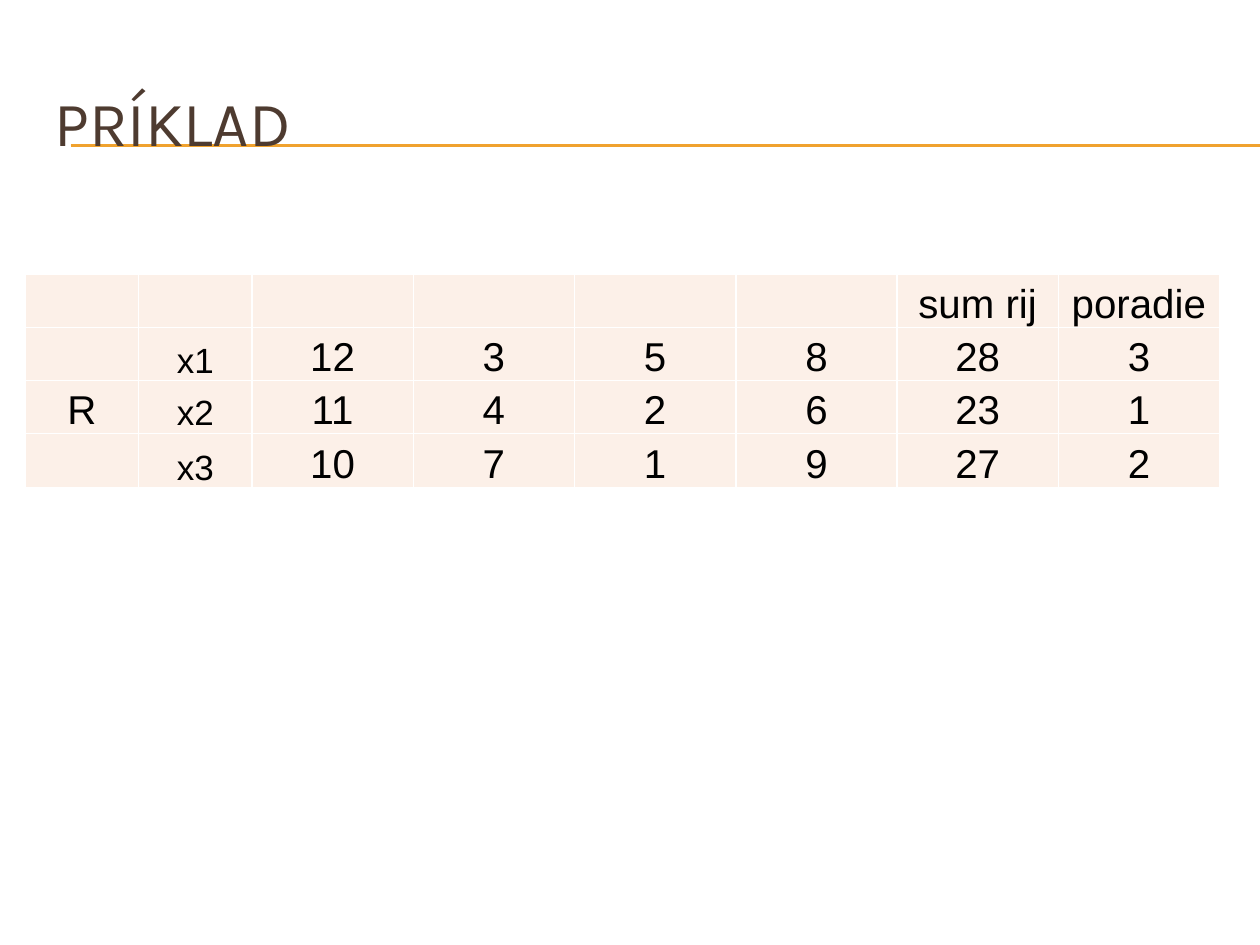
from lxml.etree import SubElement
from pptx import Presentation
from pptx.dml.color import RGBColor
from pptx.enum.shapes import MSO_CONNECTOR
from pptx.enum.text import MSO_ANCHOR, PP_ALIGN
from pptx.oxml import parse_xml
from pptx.oxml.ns import nsdecls, qn
from pptx.util import Inches, Pt

TITLE = "PRÍKLAD"
ROWS = [
    ["", "", "", "", "", "", "sum rij", "poradie"],
    ["", "x1", "12", "3", "5", "8", "28", "3"],
    ["R", "x2", "11", "4", "2", "6", "23", "1"],
    ["", "x3", "10", "7", "1", "9", "27", "2"],
]
WIDTHS = [0.9] * 2 + [1.28] * 6
HEIGHTS = [0.42] * 3 + [0.43]
RULES = [1.15, 1.16]
CELL = {
    "vertical_anchor": MSO_ANCHOR.BOTTOM,
    "margin_left": Inches(0.01),
    "margin_right": Inches(0.01),
    "margin_top": Inches(0.01),
    "margin_bottom": 0,
}


def color(code):
    """Turn a hex string into a colour."""
    return RGBColor.from_string(code)


def style(item, values):
    """Set each attribute in a dict of format values."""
    for name, value in values.items():
        setattr(item, name, value)


def write(para, text, face, size, code, align):
    """Put one formatted run into a paragraph."""
    para.alignment = align
    run = para.add_run()
    run.text = text
    style(run.font, {"name": face, "size": Pt(size)})
    run.font.color.rgb = color(code)


def border(cell):
    """Draw white borders and a pale fill on a cell."""
    props = cell._tc.get_or_add_tcPr()
    for side in ("lnL", "lnR", "lnT", "lnB"):
        props.append(parse_xml(
            f'<a:{side} {nsdecls("a")} w="{Pt(1)}"><a:solidFill>'
            f'<a:srgbClr val="FFFFFF"/></a:solidFill></a:{side}>'))
    cell.fill.solid()
    cell.fill.fore_color.rgb = color("FCF0E8")


def rule(slide, top):
    """Draw a thin rule to the right edge."""
    line = slide.shapes.add_connector(
        MSO_CONNECTOR.STRAIGHT, Inches(0.56), Inches(top), Inches(10), Inches(top))
    line.line.color.rgb = color("F0A22E")
    line.line.width = Pt(0.75)
    SubElement(line._element.spPr, qn("a:effectLst"))


def head(slide):
    """Place the title above the rules."""
    title = slide.shapes.title
    style(title, {"left": Inches(0.33), "top": Inches(0.5),
                  "width": Inches(9.5), "height": Inches(0.92)})
    frame = title.text_frame
    style(frame, {"vertical_anchor": MSO_ANCHOR.MIDDLE, "word_wrap": True})
    write(frame.paragraphs[0], TITLE, "Karla", 36, "4E3B30", PP_ALIGN.LEFT)
    slide.shapes._spTree.append(title._element)


def grid(slide):
    """Build the table of values."""
    table = slide.shapes.add_table(
        len(ROWS), len(WIDTHS), Inches(0.2), Inches(2.18),
        Inches(sum(WIDTHS)), Inches(sum(HEIGHTS))).table
    style(table, {"first_row": False, "horz_banding": False})
    for col, width in zip(table.columns, WIDTHS):
        col.width = Inches(width)
    for row, height, texts in zip(table.rows, HEIGHTS, ROWS):
        row.height = Inches(height)
        for cell, text in zip(row.cells, texts):
            style(cell, CELL)
            border(cell)
            if text:
                size = 20 if text.startswith("x") else 23
                write(cell.text_frame.paragraphs[0], text, "Arial", size,
                      "000000", PP_ALIGN.CENTER)


def main():
    """Build and save the slide."""
    deck = Presentation()
    style(deck, {"slide_width": Inches(10), "slide_height": Inches(7.5)})
    slide = deck.slides.add_slide(deck.slide_layouts[5])
    for top in RULES:
        rule(slide, top)
    head(slide)
    grid(slide)
    deck.save("out.pptx")


if __name__ == "__main__":
    main()
